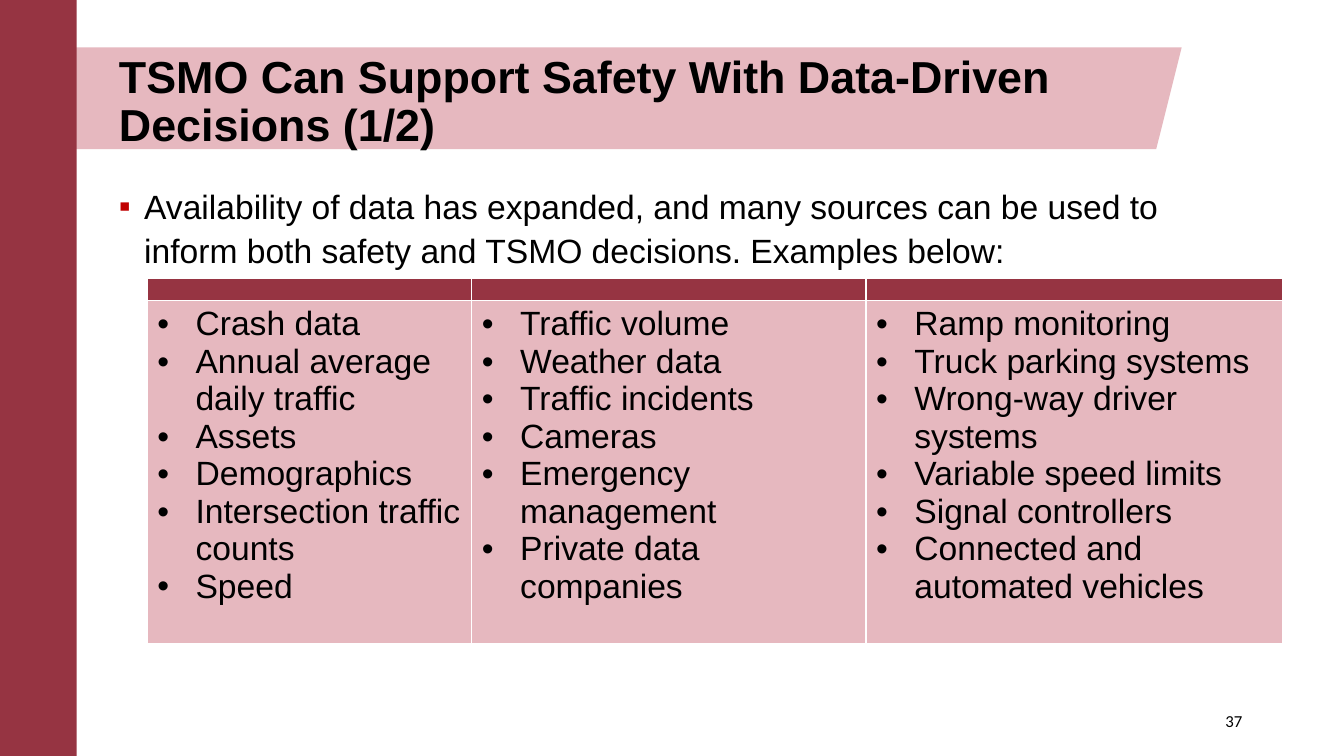
"""Build the slide on data sources for safety and TSMO decisions."""
import pptx
import pptx.util
import pptx.dml.color
import pptx.enum.shapes
import pptx.enum.text
import pptx.oxml.ns
from lxml import etree

Inches, Pt = pptx.util.Inches, pptx.util.Pt
qn = pptx.oxml.ns.qn
SHAPE = pptx.enum.shapes.MSO_SHAPE
ALIGN = pptx.enum.text.PP_ALIGN
ANCHOR = pptx.enum.text.MSO_ANCHOR
RED, PINK, BLACK, WHITE = "963442", "E6B8BF", "000000", "FFFFFF"


def color(text):
    return pptx.dml.color.RGBColor.from_string(text)


def style(para, size, face="Arial", bold=False, mark=None, tint=BLACK, indent=0):
    if mark:
        props = para._p.get_or_add_pPr()
        props.set("marL", str(Inches(indent)))
        props.set("indent", str(-Inches(indent)))
        paint = etree.SubElement(props, qn("a:buClr"))
        etree.SubElement(paint, qn("a:srgbClr"), val=tint)
        etree.SubElement(props, qn("a:buFont"), typeface="Arial")
        etree.SubElement(props, qn("a:buChar"), char=mark)
    para.space_before = Pt(0)
    for run in para.runs:
        run.font.size = Pt(size)
        run.font.name = face
        run.font.bold = bold
        run.font.color.rgb = color(BLACK)


deck = pptx.Presentation()
deck.slide_width, deck.slide_height = Inches(13.33), Inches(7.5)
slide = deck.slides.add_slide(deck.slide_layouts[1])
shapes = slide.shapes

panels = [
    (SHAPE.PARALLELOGRAM, (0.24, 0.47, 11.48, 1.01), PINK),
    (SHAPE.RECTANGLE, (0, 0, 0.76, 7.5), RED),
]
for level, (kind, box, fill) in enumerate(panels, 2):
    panel = shapes.add_shape(kind, *map(Inches, box))
    panel.shadow.inherit = False
    panel.fill.solid()
    panel.fill.fore_color.rgb = color(fill)
    panel.line.fill.background()
    shapes._spTree.insert(level, panel._element)

title, body = shapes.title, slide.placeholders[1]
number = shapes.add_textbox(0, 0, 0, 0)
texts = [
    (title, (1.08, 0.49, 9.84, 0.55), ANCHOR.TOP,
     "TSMO Can Support Safety With Data-Driven Decisions (1/2)"),
    (body, (1.08, 1.75, 11.34, 4.76), ANCHOR.TOP,
     "Availability of data has expanded, and many sources can be used to "
     "inform both safety and TSMO decisions. Examples below:"),
    (number, (9.42, 6.95, 3, 0.4), ANCHOR.MIDDLE, "37"),
]
for shape, box, anchor, words in texts:
    shape.left, shape.top, shape.width, shape.height = map(Inches, box)
    frame = shape.text_frame
    frame.text = words
    frame.word_wrap = True
    frame.auto_size = pptx.enum.text.MSO_AUTO_SIZE.NONE
    frame.vertical_anchor = anchor

para = title.text_frame.paragraphs[0]
style(para, 32, bold=True)
para.alignment = ALIGN.LEFT
para.line_spacing = 0.9
para = body.text_frame.paragraphs[0]
style(para, 24, mark="▪", tint="C00000", indent=0.25)
para.line_spacing = 1.1
para = number.text_frame.paragraphs[0]
style(para, 12, face="Calibri")
para.alignment = ALIGN.RIGHT

sources = [
    ["Crash data", "Annual average daily traffic", "Assets",
     "Demographics", "Intersection traffic counts", "Speed"],
    ["Traffic volume", "Weather data", "Traffic incidents",
     "Cameras", "Emergency management", "Private data companies"],
    ["Ramp monitoring", "Truck parking systems", "Wrong-way driver systems",
     "Variable speed limits", "Signal controllers",
     "Connected and automated vehicles"],
]
box = map(Inches, (1.46, 2.76, 11.26, 3.63))
table = shapes.add_table(2, 3, *box).table
table.first_row = table.horz_banding = False
for row, height in zip(table.rows, (0.22, 3.41)):
    row.height = Inches(height)
for column, width in zip(table.columns, (3.22, 3.91, 4.13)):
    column.width = Inches(width)

for index, items in enumerate(sources):
    head, cell = table.cell(0, index), table.cell(1, index)
    head.margin_top = head.margin_bottom = 0
    blank = head.text_frame.paragraphs[0]
    etree.SubElement(blank._p, qn("a:endParaRPr"), sz="800")
    cell.text_frame.text = "\n".join(items)
    for para in cell.text_frame.paragraphs:
        style(para, 24, mark="•", indent=0.38)
    for part, fill in ((head, RED), (cell, PINK)):
        props = part._tc.get_or_add_tcPr()
        for side in "LRTB":
            edge = etree.SubElement(props, qn("a:ln" + side), w=str(Pt(1)))
            paint = etree.SubElement(edge, qn("a:solidFill"))
            etree.SubElement(paint, qn("a:srgbClr"), val=WHITE)
        part.fill.solid()
        part.fill.fore_color.rgb = color(fill)

deck.save("out.pptx")
